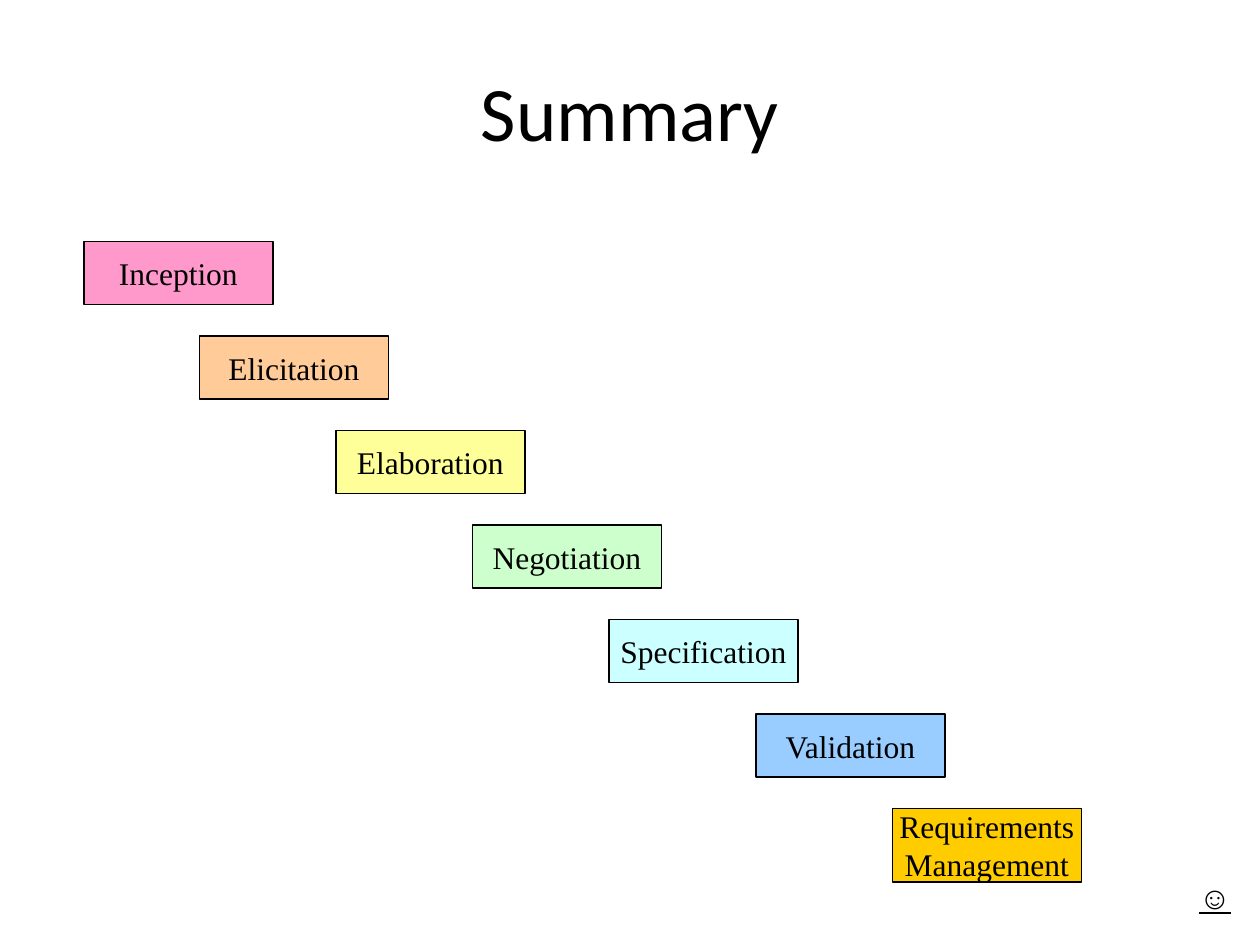
"""Build a summary slide with the requirements engineering tasks as a staircase."""
from pptx import Presentation
from pptx.dml.color import RGBColor
from pptx.enum.shapes import MSO_SHAPE
from pptx.enum.text import MSO_ANCHOR, MSO_AUTO_SIZE, PP_ALIGN
from pptx.util import Pt

COLORS = {
    "black": "000000",
    "pink": "FF99CC",
    "peach": "FFCC99",
    "yellow": "FFFF99",
    "green": "CCFFCC",
    "cyan": "CCFFFF",
    "blue": "99CCFF",
    "gold": "FFCC00",
}

TASKS = [
    ("Inception", 48, 36, "pink"),
    ("Elicitation", 114, 36, "peach"),
    ("Elaboration", 192, 36, "yellow"),
    ("Negotiation", 270, 36, "green"),
    ("Specification", 348, 36, "cyan"),
    ("Validation", 432, 36, "blue"),
    ("Requirements\nManagement", 510, 42, "gold"),
]
FIRST_TOP, STEP, BOX_WIDTH = 138, 54, 108


class SlideBuilder:
    def __init__(self, s):
        self.s = s
        self.title_font = "Calibri"
        self.body_font = "Times New Roman"

    def color(self, name):
        return RGBColor.from_string(COLORS[name])

    def set_text(self, tf, text, font, size, underline=None):
        tf.text = text
        for p in tf.paragraphs:
            p.alignment = PP_ALIGN.CENTER
            p.font.name = font
            p.font.size = Pt(size)
            p.font.underline = underline
            p.font.color.rgb = self.color("black")

    def title(self, text, left, top, width, height):
        sp = self.s.shapes.title
        sp.left, sp.top, sp.width, sp.height = map(Pt, (left, top, width, height))
        sp.text_frame.vertical_anchor = MSO_ANCHOR.MIDDLE
        self.set_text(sp.text_frame, text, self.title_font, 44)

    def box(self, text, left, top, width, height, fill):
        sp = self.s.shapes.add_shape(
            MSO_SHAPE.RECTANGLE, *map(Pt, (left, top, width, height)))
        sp.shadow.inherit = False
        sp.fill.solid()
        sp.fill.fore_color.rgb = self.color(fill)
        sp.line.color.rgb = self.color("black")
        sp.line.width = Pt(0.75)
        tf = sp.text_frame
        tf.word_wrap = False
        tf.vertical_anchor = MSO_ANCHOR.MIDDLE
        self.set_text(tf, text, self.body_font, 18)

    def label(self, text, left, top, width, height):
        sp = self.s.shapes.add_textbox(*map(Pt, (left, top, width, height)))
        tf = sp.text_frame
        tf.word_wrap = False
        tf.auto_size = MSO_AUTO_SIZE.SHAPE_TO_FIT_TEXT
        self.set_text(tf, text, self.body_font, 18, underline=True)


def main():
    prs = Presentation()
    prs.slide_width, prs.slide_height = Pt(720), Pt(540)
    builder = SlideBuilder(prs.slides.add_slide(prs.slide_layouts[5]))
    builder.title("Summary", 54, 18, 612, 90)
    for i, (text, left, height, fill) in enumerate(TASKS):
        builder.box(text, left, FIRST_TOP + i * STEP, BOX_WIDTH, height, fill)
    builder.label("☺", 678, 498, 29.5, 29)
    prs.save("out.pptx")


if __name__ == "__main__":
    main()
